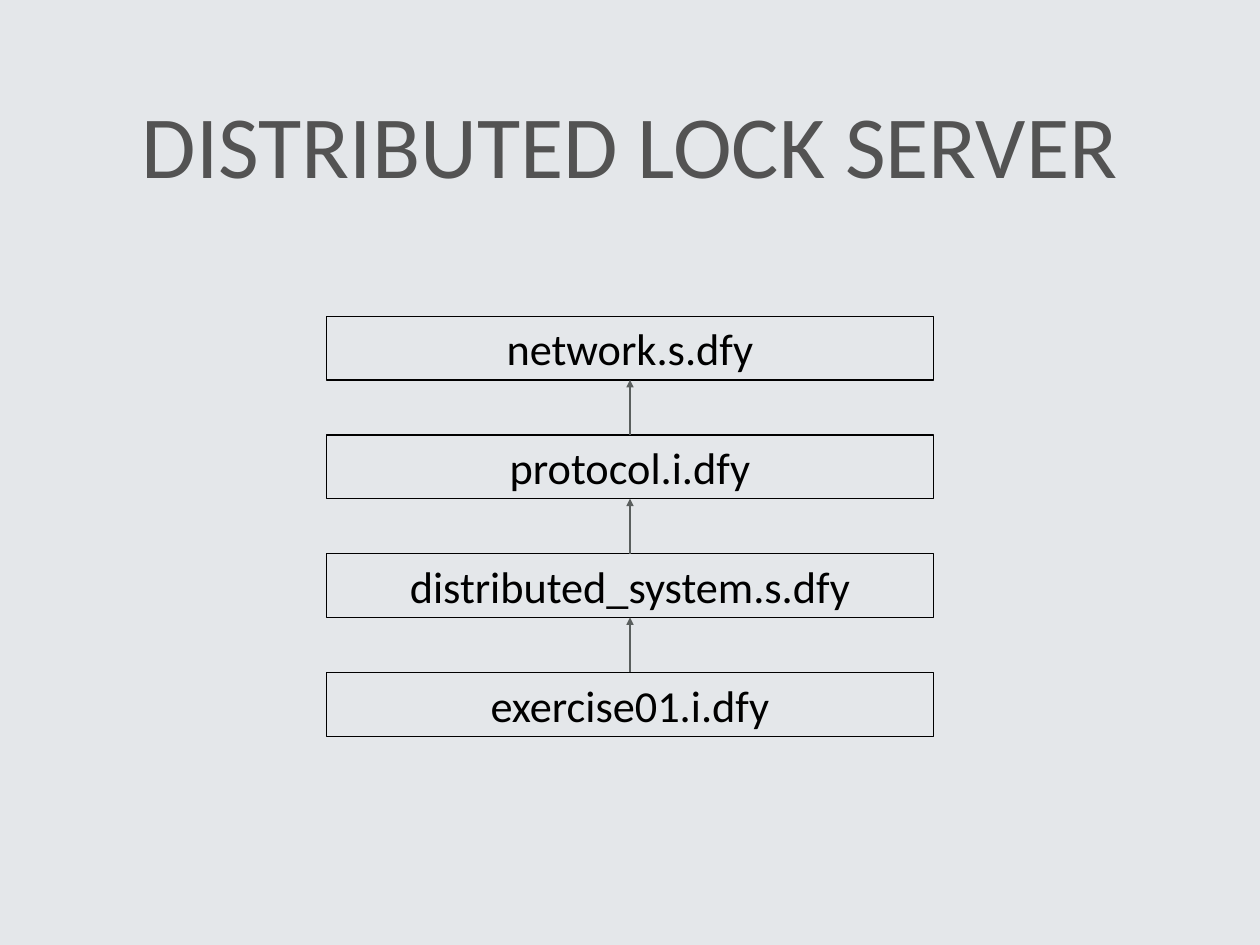
from dataclasses import dataclass

from lxml import etree
from pptx import Presentation
from pptx import util as u
from pptx.dml.color import RGBColor
from pptx.enum import shapes, text
from pptx.oxml import ns
from pptx.shapes.autoshape import Shape
from pptx.slide import Slide
from pptx.text.text import TextFrame

BACKGROUND = RGBColor(0xE4, 0xE7, 0xEA)
TITLE_GRAY = RGBColor(0x53, 0x53, 0x53)
ARROW_GRAY = RGBColor(0x5A, 0x5F, 0x5E)
BLACK = RGBColor(0, 0, 0)

FONT = "Calibri"
SLIDE_WIDTH, SLIDE_HEIGHT = 1024, 768
INSET = 4
BOX_WIDTH, BOX_HEIGHT = 493.2, 51.8
BOX_LEFT = (SLIDE_WIDTH - BOX_WIDTH) / 2
FIRST_BOX_TOP, BOX_PITCH = 257, 96.5
TOP_SIDE, BOTTOM_SIDE = 0, 2


@dataclass
class FileBox:
    name: str
    top: float


FILE_NAMES = ["network.s.dfy", "protocol.i.dfy", "distributed_system.s.dfy", "exercise01.i.dfy"]
FILE_BOXES = [FileBox(name, FIRST_BOX_TOP + row * BOX_PITCH) for row, name in enumerate(FILE_NAMES)]


def write_centered(frame: TextFrame, content: str, size: float, color: RGBColor) -> None:
    frame.word_wrap = True
    frame.vertical_anchor = text.MSO_ANCHOR.MIDDLE
    frame.margin_left = frame.margin_right = u.Pt(INSET)
    frame.margin_top = frame.margin_bottom = u.Pt(INSET)
    paragraph = frame.paragraphs[0]
    paragraph.text = content
    paragraph.alignment = text.PP_ALIGN.CENTER
    paragraph.font.name = FONT
    paragraph.font.size = u.Pt(size)
    paragraph.font.color.rgb = color


def add_file_box(slide: Slide, box: FileBox) -> Shape:
    shape = slide.shapes.add_shape(
        shapes.MSO_SHAPE.RECTANGLE,
        u.Pt(BOX_LEFT), u.Pt(box.top), u.Pt(BOX_WIDTH), u.Pt(BOX_HEIGHT),
    )
    shape.shadow.inherit = False
    shape.fill.background()
    shape.line.color.rgb = BLACK
    shape.line.width = u.Pt(1)
    write_centered(shape.text_frame, box.name, 36, BLACK)
    shape.text_frame.auto_size = text.MSO_AUTO_SIZE.SHAPE_TO_FIT_TEXT
    return shape


def add_arrow(slide: Slide, lower: Shape, upper: Shape) -> None:
    center = u.Pt(SLIDE_WIDTH / 2)
    arrow = slide.shapes.add_connector(
        shapes.MSO_CONNECTOR.STRAIGHT, center, lower.top, center, upper.top + upper.height
    )
    arrow.begin_connect(lower, TOP_SIDE)
    arrow.end_connect(upper, BOTTOM_SIDE)
    arrow.line.color.rgb = ARROW_GRAY
    arrow.line.width = u.Pt(2)
    # Arrowhead, and no shadow
    etree.SubElement(arrow.line._get_or_add_ln(), ns.qn("a:tailEnd"), type="triangle")
    etree.SubElement(arrow._element.spPr, ns.qn("a:effectLst"))


def main() -> None:
    presentation = Presentation()
    presentation.slide_width = u.Pt(SLIDE_WIDTH)
    presentation.slide_height = u.Pt(SLIDE_HEIGHT)
    slide = presentation.slides.add_slide(presentation.slide_layouts[6])
    slide.background.fill.solid()
    slide.background.fill.fore_color.rgb = BACKGROUND

    # Title
    title = slide.shapes.add_textbox(u.Pt(28), u.Pt(20), u.Pt(968), u.Pt(192))
    write_centered(title.text_frame, "DISTRIBUTED LOCK SERVER", 72, TITLE_GRAY)

    # Stack of files, each pointing to the one above
    file_shapes = [add_file_box(slide, box) for box in FILE_BOXES]
    for upper, lower in zip(file_shapes, file_shapes[1:]):
        add_arrow(slide, lower, upper)

    presentation.save("out.pptx")


if __name__ == "__main__":
    main()
